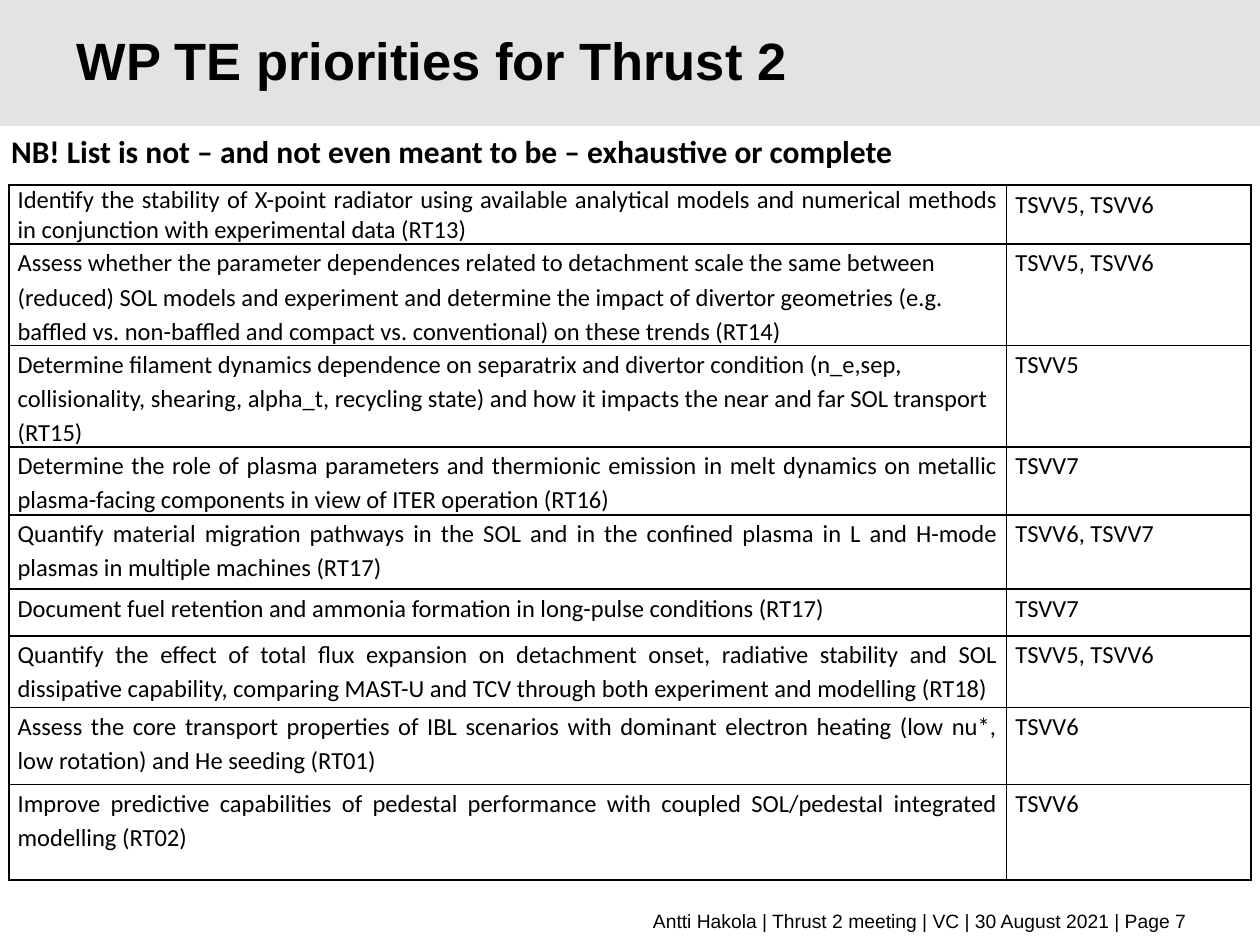
from lxml.etree import SubElement
from pptx import Presentation
from pptx.dml.color import RGBColor
from pptx.enum.shapes import MSO_SHAPE
from pptx.enum.text import MSO_ANCHOR, MSO_AUTO_SIZE, PP_ALIGN
from pptx.oxml.ns import qn
from pptx.util import Inches, Pt

COLORS = {"text": "000000", "band": "E3E3E3", "border": "000000"}

TITLE = "WP TE priorities for Thrust 2"
NOTE = "NB! List is not – and not even meant to be – exhaustive or complete"
FOOTER = "Antti Hakola | Thrust 2 meeting | VC | 30 August 2021 | Page 7"

LEFT, JUST = PP_ALIGN.LEFT, PP_ALIGN.JUSTIFY
COL_WIDTHS = [7.92, 1.94]
# priority, projects, row height, alignment, line spacing
PRIORITIES = [
    ("Identify the stability of X-point radiator using available analytical models and "
     "numerical methods in conjunction with experimental data (RT13)",
     "TSVV5, TSVV6", 0.46, JUST, 1.0),
    ("Assess whether the parameter dependences related to detachment scale the same between "
     "(reduced) SOL models and experiment and determine the impact of divertor geometries "
     "(e.g. baffled vs. non-baffled and compact vs. conventional) on these trends (RT14)",
     "TSVV5, TSVV6", 0.77, LEFT, 1.15),
    ("Determine filament dynamics dependence on separatrix and divertor condition (n_e,sep, "
     "collisionality, shearing, alpha_t, recycling state) and how it impacts the near and "
     "far SOL transport (RT15)",
     "TSVV5", 0.77, LEFT, 1.15),
    ("Determine the role of plasma parameters and thermionic emission in melt dynamics on "
     "metallic plasma-facing components in view of ITER operation (RT16)",
     "TSVV7", 0.54, JUST, 1.15),
    ("Quantify material migration pathways in the SOL and in the confined plasma in L and "
     "H-mode plasmas in multiple machines (RT17)",
     "TSVV6, TSVV7", 0.59, JUST, 1.15),
    ("Document fuel retention and ammonia formation in long-pulse conditions (RT17)",
     "TSVV7", 0.37, JUST, 1.15),
    ("Quantify the effect of total flux expansion on detachment onset, radiative stability "
     "and SOL dissipative capability, comparing MAST-U and TCV through both experiment and "
     "modelling (RT18)",
     "TSVV5, TSVV6", 0.57, JUST, 1.15),
    ("Assess the core transport properties of IBL scenarios with dominant electron heating "
     "(low nu*, low rotation) and He seeding (RT01)",
     "TSVV6", 0.61, JUST, 1.15),
    ("Improve predictive capabilities of pedestal performance with coupled SOL/pedestal "
     "integrated modelling (RT02)",
     "TSVV6", 0.76, JUST, 1.15),
]


def rgb(name):
    return RGBColor.from_string(COLORS[name])


def write(tf, text, font, size, bold=False, align=LEFT, spacing=None):
    tf.text = text
    p = tf.paragraphs[0]
    p.alignment = align
    p.line_spacing = spacing
    f = p.runs[0].font
    f.name, f.size, f.bold = font, Pt(size), bold
    f.color.rgb = rgb("text")


def add_text(s, box, text, font, size, anchor=MSO_ANCHOR.MIDDLE, wrap=True, **style):
    tf = s.shapes.add_textbox(*map(Inches, box)).text_frame
    tf.word_wrap = wrap
    tf.vertical_anchor = anchor
    write(tf, text, font, size, **style)
    return tf


def add_borders(cell, width=1):
    tc_pr = cell._tc.get_or_add_tcPr()
    for i, side in enumerate(("lnL", "lnR", "lnT", "lnB")):
        ln = SubElement(tc_pr, qn(f"a:{side}"), w=str(Pt(width)))
        fill = SubElement(ln, qn("a:solidFill"))
        SubElement(fill, qn("a:srgbClr"), val=COLORS["border"])
        tc_pr.insert(i, ln)


def add_priority_table(s):
    heights = [row[2] for row in PRIORITIES]
    table = s.shapes.add_table(
        len(PRIORITIES), len(COL_WIDTHS), Inches(0.07), Inches(1.47),
        Inches(sum(COL_WIDTHS)), Inches(sum(heights))).table
    table.first_row = table.horz_banding = False
    for col, width in zip(table.columns, COL_WIDTHS):
        col.width = Inches(width)
    for row, (priority, projects, height, align, spacing) in zip(table.rows, PRIORITIES):
        row.height = Inches(height)
        contents = [(priority, align, spacing), (projects, LEFT, 1.15)]
        for cell, (text, cell_align, cell_spacing) in zip(row.cells, contents):
            cell.margin_left = cell.margin_right = Inches(0.07)
            cell.margin_top = cell.margin_bottom = 0
            cell.fill.background()
            add_borders(cell)
            write(cell.text_frame, text, "Calibri", 14,
                  align=cell_align, spacing=cell_spacing)


def main():
    prs = Presentation()
    prs.slide_width, prs.slide_height = Inches(10), Inches(7.5)
    s = prs.slides.add_slide(prs.slide_layouts[6])

    # Title band
    band = s.shapes.add_shape(MSO_SHAPE.RECTANGLE, 0, 0, prs.slide_width, Inches(1))
    band.shadow.inherit = False
    band.fill.solid()
    band.fill.fore_color.rgb = rgb("band")
    band.line.fill.background()

    # Footer and title
    add_text(s, (0.51, 7.16, 9.01, 0.29), FOOTER, "Arial", 11, align=PP_ALIGN.RIGHT)
    add_text(s, (0.51, 0.25, 8.5, 0.5), TITLE, "Arial", 30, bold=True, spacing=Pt(32))

    # Priorities and the note above them
    add_priority_table(s)
    note = add_text(s, (-0.01, 1, 7.26, 0.4), NOTE, "Calibri", 18,
                    anchor=MSO_ANCHOR.TOP, wrap=False, bold=True)
    note.auto_size = MSO_AUTO_SIZE.SHAPE_TO_FIT_TEXT

    prs.save("out.pptx")


if __name__ == "__main__":
    main()
